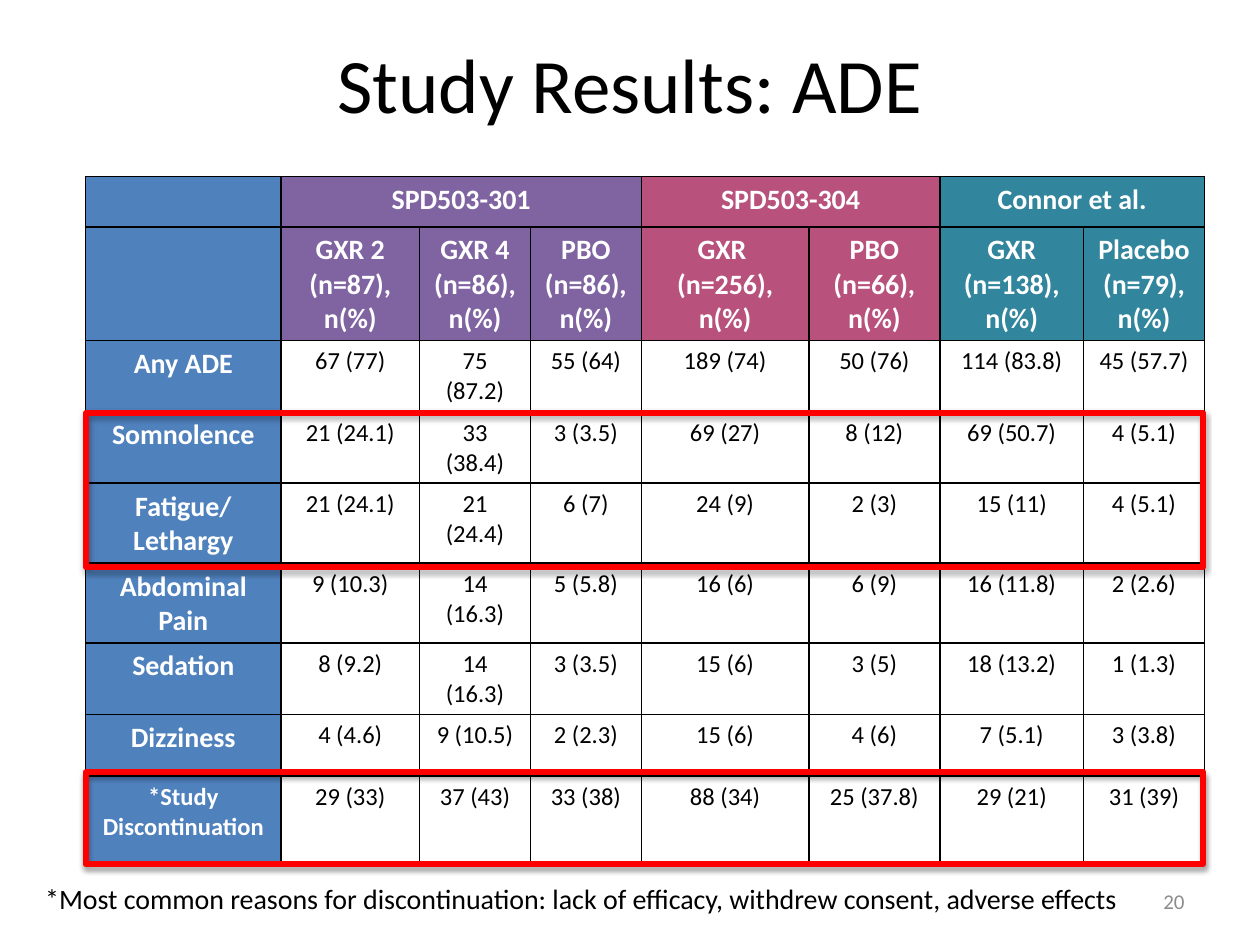
from lxml.etree import SubElement
from pptx import Presentation
from pptx.dml.color import RGBColor
from pptx.enum.shapes import MSO_SHAPE
from pptx.enum.text import MSO_ANCHOR, PP_ALIGN
from pptx.oxml import parse_xml
from pptx.oxml.ns import nsdecls, qn
from pptx.util import Inches, Pt

COLORS = {
    "black": "000000", "white": "FFFFFF", "grey": "8C8C8C", "red": "FF0000",
    "blue": "4F81BD", "purple": "8064A2", "rose": "B8527D", "teal": "31859C",
}
LEFT, TOP, WIDTH, HEIGHT = 0.68, 1.4, 8.87, 5.46
COLUMN_WIDTHS = [1.55, 1.1, 0.88, 0.88, 1.33, 1.04, 1.14, 0.96]
ROW_HEIGHTS = [0.35, 0.89, 0.49, 0.49, 0.55, 0.55, 0.49, 0.49, 0.7]
STUDIES = [  # name, fill, first column, last column
    ("SPD503-301", "purple", 1, 3),
    ("SPD503-304", "rose", 4, 5),
    ("Connor et al.", "teal", 6, 7),
]
ARMS = [
    "GXR 2\n(n=87), n(%)", "GXR 4\n(n=86),n(%)", "PBO (n=86), n(%)",
    "GXR \n(n=256), n(%)", "PBO (n=66), n(%)",
    "GXR (n=138), n(%)", "Placebo (n=79), n(%)",
]
EVENTS = [
    ("Any ADE", "67 (77)", "75 (87.2)", "55 (64)", "189 (74)", "50 (76)", "114 (83.8)", "45 (57.7)"),
    ("Somnolence", "21 (24.1)", "33 (38.4)", "3 (3.5)", "69 (27)", "8 (12)", "69 (50.7)", "4 (5.1)"),
    ("Fatigue/Lethargy", "21 (24.1)", "21 (24.4)", "6 (7)", "24 (9)", "2 (3)", "15 (11)", "4 (5.1)"),
    ("Abdominal Pain", "9 (10.3)", "14 (16.3)", "5 (5.8)", "16 (6)", "6 (9)", "16 (11.8)", "2 (2.6)"),
    ("Sedation", "8 (9.2)", "14 (16.3)", "3 (3.5)", "15 (6)", "3 (5)", "18 (13.2)", "1 (1.3)"),
    ("Dizziness", "4 (4.6)", "9 (10.5)", "2 (2.3)", "15 (6)", "4 (6)", "7 (5.1)", "3 (3.8)"),
    ("*Study Discontinuation", "29 (33)", "37 (43)", "33 (38)", "88 (34)", "25 (37.8)", "29 (21)", "31 (39)"),
]


def rgb(name):
    return RGBColor.from_string(COLORS[name])


def write(frame, text, size, color="black", bold=False, align=PP_ALIGN.LEFT):
    frame.text = text
    for para in frame.paragraphs:
        para.alignment = align
        for span in para.runs:
            font_format = {"name": "Calibri", "size": Pt(size), "bold": bold}
            for name, value in font_format.items():
                setattr(span.font, name, value)
            span.font.color.rgb = rgb(color)


def add_title(page, text):
    title = page.shapes.title
    title.left, title.top, title.width, title.height = map(Inches, (0.5, 0.03, 9, 1.25))
    title.text_frame.vertical_anchor = MSO_ANCHOR.MIDDLE
    write(title.text_frame, text, 44, align=PP_ALIGN.CENTER)


def add_text(page, place, text, size, color="black", align=PP_ALIGN.LEFT, anchor=MSO_ANCHOR.TOP):
    box = page.shapes.add_textbox(*map(Inches, place))
    box.text_frame.word_wrap = True
    box.text_frame.vertical_anchor = anchor
    write(box.text_frame, text, size, color, align=align)


def add_borders(cell):
    properties = cell._tc.get_or_add_tcPr()
    for position, side in enumerate(("lnL", "lnR", "lnT", "lnB")):
        line = parse_xml(f'<a:{side} {nsdecls("a")} w="{Pt(1)}"/>')
        fill = SubElement(line, qn("a:solidFill"))
        SubElement(fill, qn("a:srgbClr"), val=COLORS["black"])
        properties.insert(position, line)


def fill_cell(cell, text, size, color="black", bold=False, fill=None):
    write(cell.text_frame, text, size, color, bold, PP_ALIGN.CENTER)
    if fill:
        cell.fill.solid()
        cell.fill.fore_color.rgb = rgb(fill)
    else:
        cell.fill.background()


def fill_header(cell, text, fill, size=16):
    fill_cell(cell, text, size, "white", True, fill)


def add_results_table(page):
    frame = page.shapes.add_table(
        len(ROW_HEIGHTS), len(COLUMN_WIDTHS), *map(Inches, (LEFT, TOP, WIDTH, HEIGHT)))
    table = frame.table
    for column, width in zip(table.columns, COLUMN_WIDTHS):
        column.width = Inches(width)
    for row, height in zip(table.rows, ROW_HEIGHTS):
        row.height = Inches(height)
    frame.height = Inches(HEIGHT)

    for row in (0, 1):
        fill_header(table.cell(row, 0), "", "blue")
    for name, fill, first, last in STUDIES:
        for column in range(first, last + 1):
            fill_header(table.cell(0, column), "", fill)
            fill_header(table.cell(1, column), ARMS[column - 1], fill)
        table.cell(0, first).merge(table.cell(0, last))
        fill_header(table.cell(0, first), name, fill)
    for row, (event, *counts) in enumerate(EVENTS, start=2):
        fill_header(table.cell(row, 0), event, "blue", 14 if event.startswith("*") else 16)
        for column, count in enumerate(counts, start=1):
            fill_cell(table.cell(row, column), count, 14)
    for cell in table.iter_cells():
        add_borders(cell)


def add_highlight(page, top, height):
    """Red outline with a soft shadow around whole table rows."""
    box = page.shapes.add_shape(MSO_SHAPE.RECTANGLE, *map(Inches, (LEFT, top, WIDTH, height)))
    box.fill.background()
    box.line.color.rgb = rgb("red")
    box.line.width = Pt(3.5)
    box.shadow.inherit = False
    effects = box._element.spPr.find(qn("a:effectLst"))
    shadow = SubElement(effects, qn("a:outerShdw"), blurRad=str(Pt(3.1)), dist=str(Pt(1.8)),
                        dir="5400000", rotWithShape="0")
    color = SubElement(shadow, qn("a:srgbClr"), val=COLORS["black"])
    SubElement(color, qn("a:alpha"), val="35000")


def main():
    deck = Presentation()
    deck.slide_width, deck.slide_height = Inches(10), Inches(7.5)
    page = deck.slides.add_slide(deck.slide_layouts[5])
    add_title(page, "Study Results: ADE")
    add_text(page, (0.26, 6.95, 9.09, 0.37),
             "*Most common reasons for discontinuation: lack of efficacy, "
             "withdrew consent, adverse effects", 16)
    add_text(page, (7.17, 6.95, 2.33, 0.4), "20", 12, "grey", PP_ALIGN.RIGHT, MSO_ANCHOR.MIDDLE)
    add_results_table(page)
    add_highlight(page, 3.28, 1.22)
    add_highlight(page, 6.13, 0.73)
    deck.save("out.pptx")


if __name__ == "__main__":
    main()
